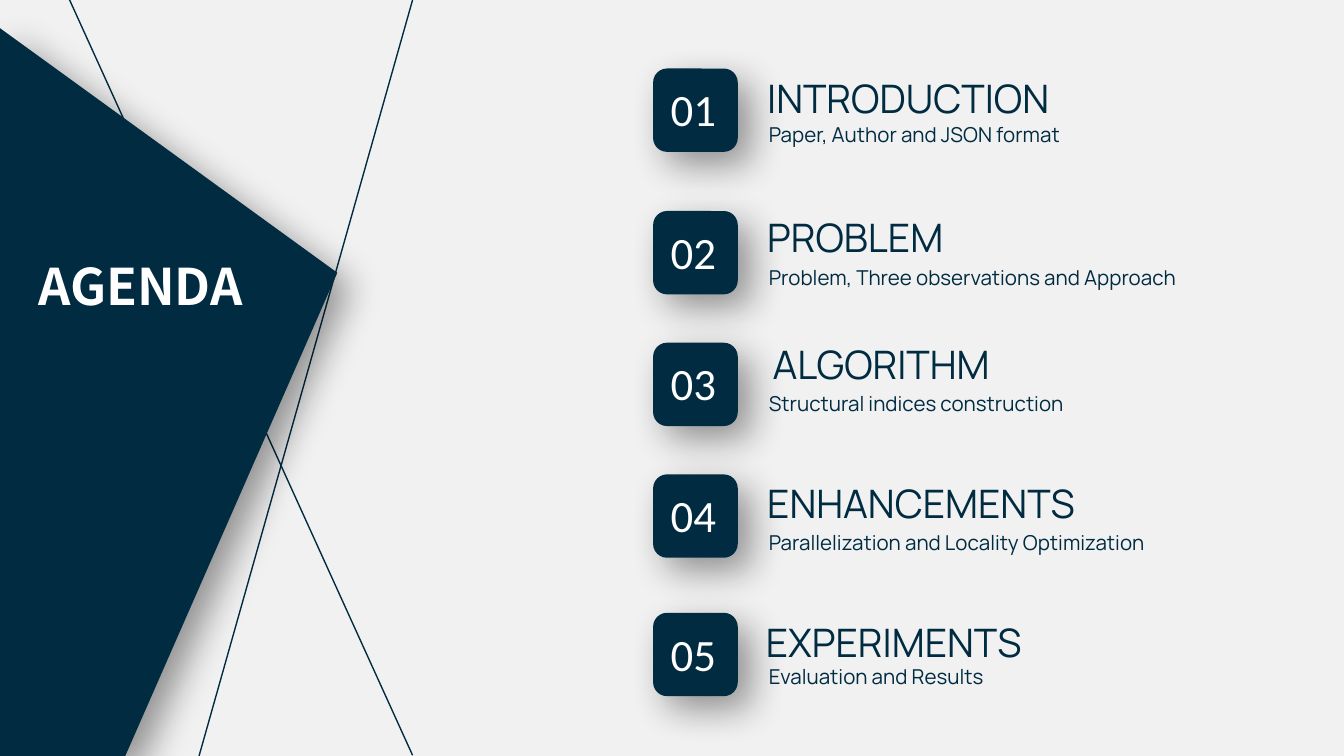
from lxml.etree import SubElement
from pptx import Presentation
from pptx.dml.color import RGBColor
from pptx.enum.shapes import MSO_CONNECTOR, MSO_SHAPE
from pptx.enum.text import MSO_ANCHOR, MSO_AUTO_SIZE, PP_ALIGN
from pptx.oxml.ns import qn
from pptx.util import Inches, Pt

COLORS = {"background": "F1F1F1", "navy": "002B41", "white": "FFFFFF", "shadow": "000000"}

AGENDA = [
    ("INTRODUCTION", "Paper, Author and JSON format", 0.51, 0.75, -0.06, 0.36),
    ("PROBLEM", "Problem, Three observations and Approach", 1.57, 0.75, -0.08, 0.36),
    ("ALGORITHM", "Structural indices construction", 2.55, 0.79, -0.12, 0.32),
    ("ENHANCEMENTS", "Parallelization and Locality Optimization", 3.53, 0.75, -0.06, 0.37),
    ("EXPERIMENTS", "Evaluation and Results", 4.56, 0.74, -0.06, 0.34),
]


def color(name):
    return RGBColor.from_string(COLORS[name])


def write_text(shape, text, size, font, fill="navy", bold=False,
               align=PP_ALIGN.LEFT, inset=(0.07, 0.04)):
    frame = shape.text_frame
    frame.word_wrap = True
    frame.auto_size = MSO_AUTO_SIZE.NONE
    frame.vertical_anchor = MSO_ANCHOR.TOP
    frame.margin_left = frame.margin_right = Inches(inset[0])
    frame.margin_top = frame.margin_bottom = Inches(inset[1])
    paragraph = frame.paragraphs[0]
    paragraph.alignment = align
    run = paragraph.add_run()
    run.text = text
    run.font.size = Pt(size)
    run.font.name = font
    run.font.bold = bold
    run.font.color.rgb = color(fill)
    properties = run.font._element
    for script in ("a:ea", "a:cs"):
        SubElement(properties, qn(script), typeface=font)


def add_text(slide, left, top, width, height, text, **text_format):
    box = slide.shapes.add_textbox(Inches(left), Inches(top), Inches(width), Inches(height))
    write_text(box, text, **text_format)


def style_panel(shape):
    shape.fill.solid()
    shape.fill.fore_color.rgb = color("navy")
    shape.line.fill.background()
    shape.shadow.inherit = False
    effects = shape._element.spPr.find(qn("a:effectLst"))
    shadow = SubElement(effects, qn("a:outerShdw"), blurRad=str(Pt(20)), dist=str(Pt(10)),
                        dir="2700000", algn="tl", rotWithShape="0")
    shade = SubElement(shadow, qn("a:srgbClr"), val=COLORS["shadow"])
    SubElement(shade, qn("a:alpha"), val="40000")


def add_line(group, start, end):
    line = group.shapes.add_connector(
        MSO_CONNECTOR.STRAIGHT, *(Inches(value) for value in (*start, *end)))
    line.line.color.rgb = color("navy")
    line.line.width = Pt(0.75)
    SubElement(line._element.spPr, qn("a:effectLst"))


def build_title_panel(slide, left, top, width, height):
    lines = slide.shapes.add_group_shape()
    add_line(lines, (left + 3.07, top - 0.21), (left + 1.46, top + 5.49))
    add_line(lines, (left + 3.07, top + 5.41), (left + 0.45, top - 0.36))
    builder = slide.shapes.build_freeform(Inches(left), Inches(top), scale=1.0)
    corners = [(width, 1.82), (0.93, height), (0, height)]
    builder.add_line_segments([(Inches(left + x), Inches(top + y)) for x, y in corners])
    style_panel(builder.convert_to_shape())

    title = slide.shapes.title
    title.left, title.top = Inches(left + 0.1), Inches(top + 1.65)
    title.width, title.height = Inches(1.89), Inches(0.53)
    write_text(title, "AGENDA", size=27, font="Noto Sans CJK SC", fill="white",
               bold=True, align=PP_ALIGN.CENTER)
    slide.shapes._spTree.append(title._element)


def build_entry(slide, left, top, number, heading, detail, heading_left, heading_top, detail_top):
    badge = slide.shapes.add_shape(MSO_SHAPE.ROUNDED_RECTANGLE, Inches(left), Inches(top),
                                   Inches(0.63), Inches(0.62))
    style_panel(badge)
    add_text(slide, left + 0.06, top + 0.06, 0.54, 0.48, f"{number:02}",
             size=24, font="Calibri", fill="white")
    add_text(slide, left + heading_left, top + heading_top, 3.45, 0.56, heading,
             size=21, font="Manrope", inset=(0.1, 0.1))
    add_text(slide, left + 0.79, top + detail_top, 3.45, 0.26, detail, size=11, font="Manrope")


def main():
    presentation = Presentation()
    presentation.slide_width = Inches(10)
    presentation.slide_height = presentation.slide_width * 9 // 16
    slide = presentation.slides.add_slide(presentation.slide_layouts[5])
    slide.background.fill.solid()
    slide.background.fill.fore_color.rgb = color("background")
    build_title_panel(slide, 0, 0.21, 2.51, 5.42)
    for number, (heading, detail, top, *offsets) in enumerate(AGENDA, 1):
        build_entry(slide, 4.86, top, number, heading, detail, *offsets)
    presentation.save("out.pptx")


if __name__ == "__main__":
    main()
